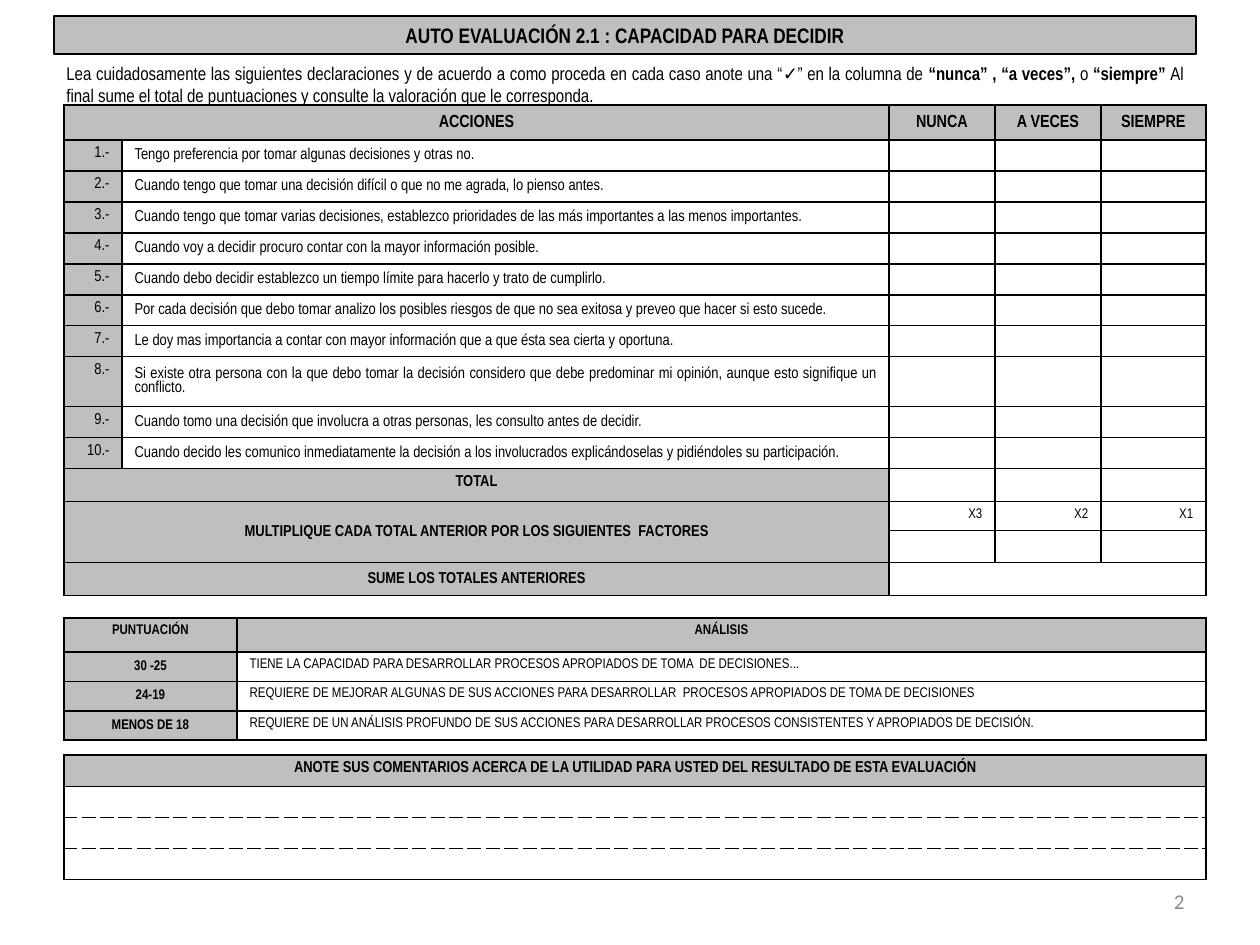
from dataclasses import dataclass

from lxml import etree
from pptx import Presentation
from pptx.dml.color import RGBColor
from pptx.enum.text import MSO_ANCHOR, MSO_AUTO_SIZE, PP_ALIGN
from pptx.oxml.ns import qn
from pptx.util import Pt

LEFT, CENTER, RIGHT, JUSTIFY = PP_ALIGN.LEFT, PP_ALIGN.CENTER, PP_ALIGN.RIGHT, PP_ALIGN.JUSTIFY
TOP, MIDDLE = MSO_ANCHOR.TOP, MSO_ANCHOR.MIDDLE
FIXED_SIZE = MSO_AUTO_SIZE.NONE

BLACK = RGBColor(0x00, 0x00, 0x00)
WHITE = RGBColor(0xFF, 0xFF, 0xFF)
GRAY = RGBColor(0xBF, 0xBF, 0xBF)
NUMBER_GRAY = RGBColor(0x8C, 0x8C, 0x8C)

EMU_PER_PX = 914400 / 126
FONT = "Arial Narrow"
TABLE_LEFT = 64

ACTIONS = [
    "Tengo preferencia por tomar algunas decisiones y otras no.",
    "Cuando tengo que tomar una decisión difícil o que no me agrada, lo pienso antes.",
    "Cuando tengo que tomar varias decisiones, establezco prioridades de las más importantes a las menos importantes.",
    "Cuando voy a decidir procuro contar con la mayor información posible.",
    "Cuando debo decidir establezco un tiempo límite para hacerlo y trato de cumplirlo.",
    "Por cada decisión que debo tomar analizo los posibles riesgos de que no sea exitosa y preveo que hacer si esto sucede.",
    "Le doy mas importancia a contar con mayor información que a que ésta sea cierta y oportuna.",
    "Si existe otra persona con la que debo tomar la decisión considero que debe predominar mi opinión, aunque esto signifique un conflicto.",
    "Cuando tomo una decisión que involucra a otras personas, les consulto antes de decidir.",
    "Cuando decido les comunico inmediatamente la decisión a los involucrados explicándoselas y pidiéndoles su participación.",
]
ANALYSIS = [
    ("30 -25", "TIENE LA CAPACIDAD PARA DESARROLLAR PROCESOS APROPIADOS DE TOMA  DE DECISIONES..."),
    ("24-19", "REQUIERE DE MEJORAR ALGUNAS DE SUS ACCIONES PARA DESARROLLAR  PROCESOS APROPIADOS DE TOMA DE DECISIONES"),
    ("MENOS DE 18", "REQUIERE DE UN ANÁLISIS PROFUNDO DE SUS ACCIONES PARA DESARROLLAR PROCESOS CONSISTENTES Y APROPIADOS DE DECISIÓN."),
]
INTRO = [
    ("Lea cuidadosamente las siguientes declaraciones y de acuerdo a como proceda en cada caso anote una “✓” en la columna de ", False),
    ("“nunca” , “a veces”, ", True),
    ("o ", False),
    ("“siempre” ", True),
    ("Al final sume el total de puntuaciones y consulte la valoración que le corresponda.", False),
]


@dataclass(frozen=True)
class Style:
    size: float
    bold: bool = False
    align: PP_ALIGN = CENTER
    anchor: MSO_ANCHOR = TOP
    fill: RGBColor = WHITE
    spacing: float = 1.0


HEADER = Style(10, True, anchor=MIDDLE, fill=GRAY)
NUMBER = Style(9, align=RIGHT, fill=GRAY)
ACTION = Style(9, align=JUSTIFY, anchor=MIDDLE, spacing=0.9)
TOTAL = Style(9, True, fill=GRAY)
SUMMARY = Style(9, True, anchor=MIDDLE, fill=GRAY)
FACTOR = Style(8, align=RIGHT)
ANALYSIS_HEADER = Style(8, True, fill=GRAY)
SCORE = Style(8, True, anchor=MIDDLE, fill=GRAY)
VERDICT = Style(8, align=JUSTIFY)
BLANK = Style(8, align=LEFT)
EMPTY = ("", BLANK)


def px(value):
    return round(value * EMU_PER_PX)


def format_paragraph(paragraph, size, bold=None, align=CENTER, color=BLACK, name=FONT):
    paragraph.alignment = align
    paragraph.font.size = Pt(size)
    paragraph.font.bold = bold
    paragraph.font.name = name
    paragraph.font.color.rgb = color


def set_borders(cell, dashed_sides):
    properties = cell._tc.get_or_add_tcPr()
    for side in "LRTB":
        line = etree.SubElement(properties, qn(f"a:ln{side}"), w=str(Pt(1)))
        fill = etree.SubElement(line, qn("a:solidFill"))
        etree.SubElement(fill, qn("a:srgbClr"), val=str(BLACK))
        dash = "sysDash" if side in dashed_sides else "solid"
        etree.SubElement(line, qn("a:prstDash"), val=dash)


def write_cell(cell, text, style, dashed_sides=""):
    set_borders(cell, dashed_sides)
    cell.fill.solid()
    cell.fill.fore_color.rgb = style.fill
    cell.vertical_anchor = style.anchor
    paragraph = cell.text_frame.paragraphs[0]
    format_paragraph(paragraph, style.size, style.bold, style.align)
    paragraph.line_spacing = style.spacing
    if text:
        paragraph.add_run().text = text
    else:
        etree.SubElement(paragraph._p, qn("a:endParaRPr"), sz=str(style.size * 100))


def add_grid(slide, top, widths, heights, rows, merges=(), dashes=None):
    frame = slide.shapes.add_table(
        len(heights), len(widths), px(TABLE_LEFT), px(top), px(sum(widths)), px(sum(heights)))
    table = frame.table
    for column, width in zip(table.columns, widths):
        column.width = px(width)
    for row, height in zip(table.rows, heights):
        row.height = px(height)
    for row_index, row in enumerate(rows):
        for column_index, (text, style) in enumerate(row):
            dashed_sides = (dashes or {}).get(row_index, "")
            write_cell(table.cell(row_index, column_index), text, style, dashed_sides)
    for first, last in merges:
        table.cell(*first).merge(table.cell(*last))


def add_title(slide, text):
    title = slide.shapes.title
    title.left, title.top, title.width, title.height = px(54), px(16), px(1142), px(38)
    title.fill.solid()
    title.fill.fore_color.rgb = GRAY
    title.line.color.rgb = BLACK
    title.line.width = Pt(1)
    title.text_frame.text = text
    title.text_frame.auto_size = FIXED_SIZE
    title.text_frame.vertical_anchor = MIDDLE
    format_paragraph(title.text_frame.paragraphs[0], 12, True)


def add_text(slide, left, top, width, height):
    frame = slide.shapes.add_textbox(px(left), px(top), px(width), px(height)).text_frame
    frame.word_wrap = True
    return frame


def add_intro(slide):
    frame = add_text(slide, 54, 56, 1142, 59)
    paragraph = frame.paragraphs[0]
    format_paragraph(paragraph, 10.5, align=JUSTIFY)
    for text, bold in INTRO:
        run = paragraph.add_run()
        run.text = text
        run.font.bold = bold


def add_slide_number(slide):
    frame = add_text(slide, 903, 876, 294, 50)
    frame.vertical_anchor = MIDDLE
    frame.text = "2"
    format_paragraph(frame.paragraphs[0], 12, align=RIGHT, color=NUMBER_GRAY, name="Calibri")


def add_actions_table(slide):
    headings = ["ACCIONES", "", "NUNCA", "A VECES", "SIEMPRE"]
    label_gap = ("", SUMMARY)
    rows = [[(text, HEADER) for text in headings]]
    rows += [[(f"{number}.-", NUMBER), (text, ACTION)] + [EMPTY] * 3
             for number, text in enumerate(ACTIONS, 1)]
    rows += [
        [("TOTAL", TOTAL), label_gap] + [EMPTY] * 3,
        [("MULTIPLIQUE CADA TOTAL ANTERIOR POR LOS SIGUIENTES  FACTORES", SUMMARY), label_gap]
        + [(factor, FACTOR) for factor in ("X3", "X2", "X1")],
        [label_gap] * 2 + [EMPTY] * 3,
        [("SUME LOS TOTALES ANTERIORES", SUMMARY), label_gap] + [EMPTY] * 3,
    ]
    heights = [35] + [31] * 7 + [50, 31, 31, 33, 29, 32, 33]
    merges = [((0, 0), (0, 1)), ((11, 0), (11, 1)), ((12, 0), (13, 1)),
              ((14, 0), (14, 1)), ((14, 2), (14, 4))]
    add_grid(slide, 105, [58, 767, 106, 106, 105], heights, rows, merges)


def add_comments_table(slide):
    heading = "ANOTE SUS COMENTARIOS ACERCA DE LA UTILIDAD PARA USTED DEL RESULTADO DE ESTA EVALUACIÓN"
    rows = [[(heading, TOTAL)]] + [[EMPTY]] * 3
    add_grid(slide, 755, [1142], [31] * 4, rows, dashes={1: "B", 2: "TB", 3: "T"})


def add_analysis_table(slide):
    rows = [[("PUNTUACIÓN", ANALYSIS_HEADER), ("ANÁLISIS", ANALYSIS_HEADER)]]
    rows += [[(score, SCORE), (verdict, VERDICT)] for score, verdict in ANALYSIS]
    add_grid(slide, 618, [173, 969], [34, 29, 29, 29], rows)


def main():
    presentation = Presentation()
    presentation.slide_width, presentation.slide_height = px(1260), px(945)
    slide = presentation.slides.add_slide(presentation.slide_layouts[5])
    add_title(slide, "AUTO EVALUACIÓN 2.1 : CAPACIDAD PARA DECIDIR")
    add_actions_table(slide)
    add_intro(slide)
    add_slide_number(slide)
    add_comments_table(slide)
    add_analysis_table(slide)
    presentation.save("out.pptx")


if __name__ == "__main__":
    main()
